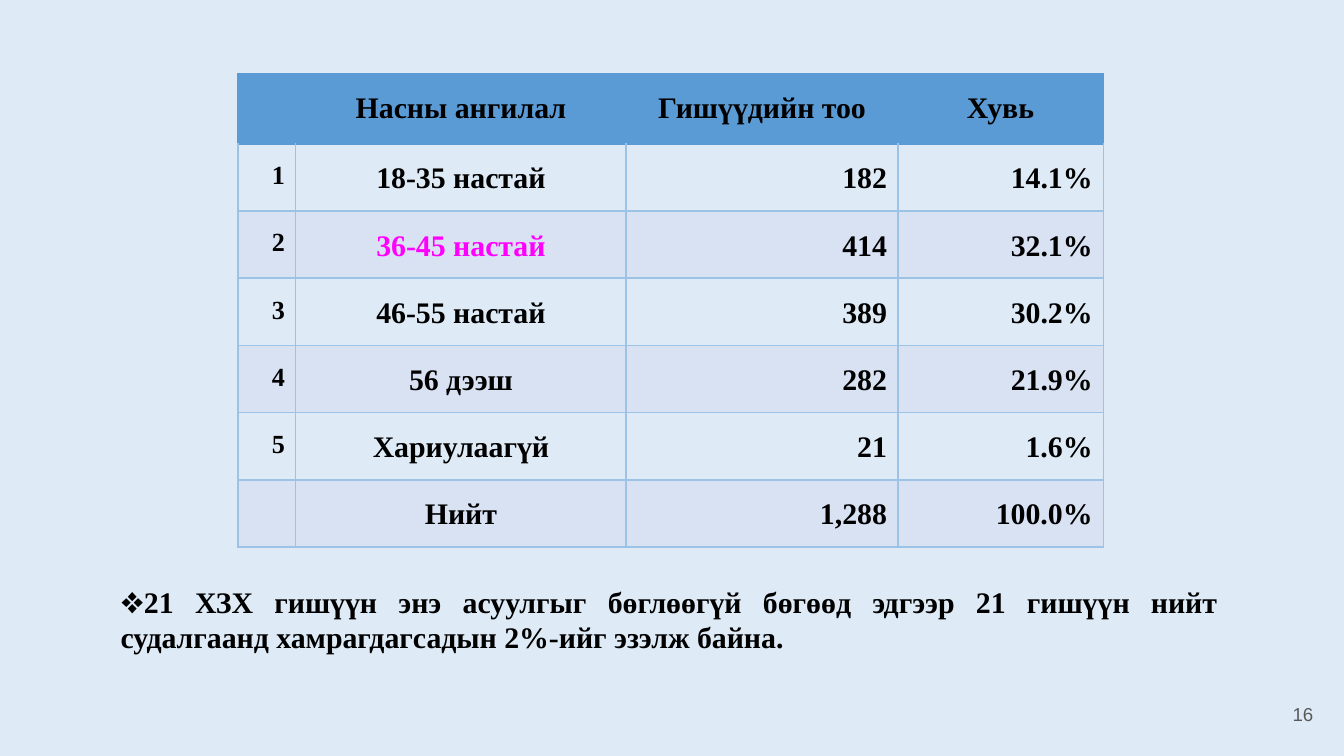
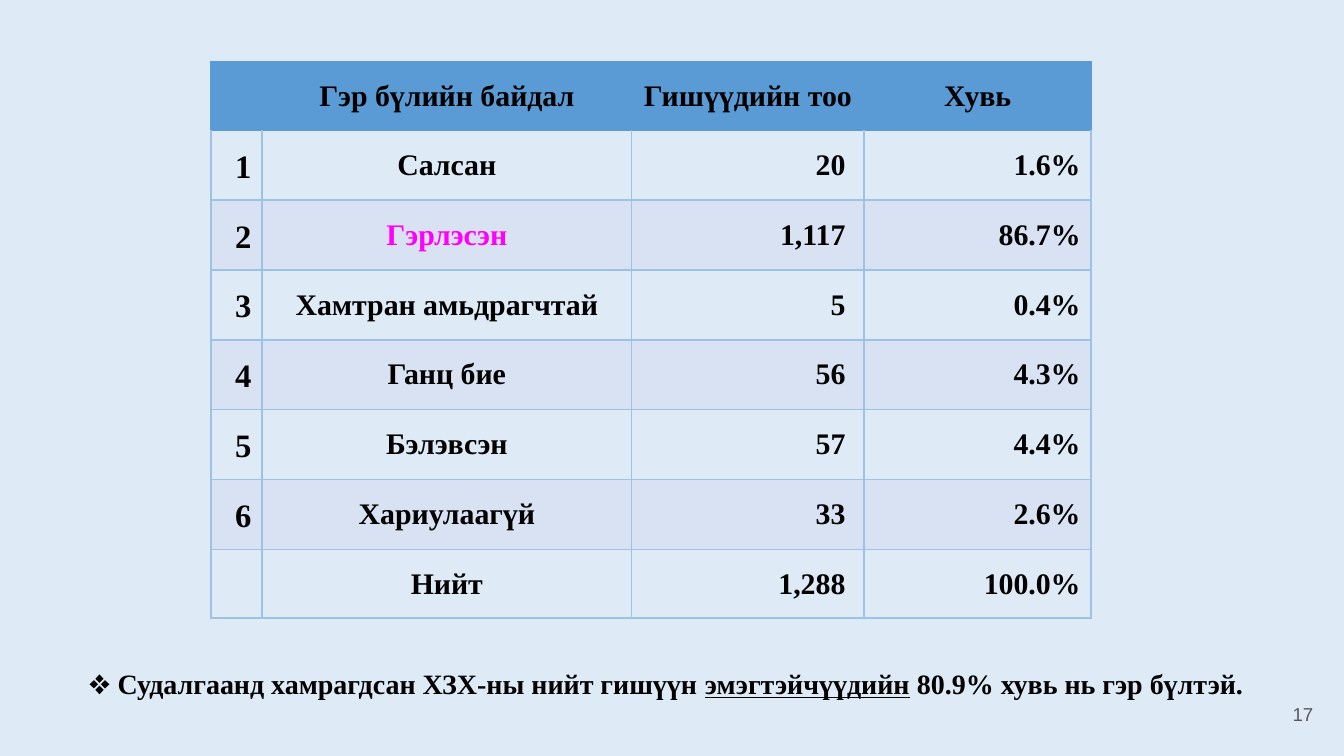
import lxml.etree
import pptx
import pptx.dml.color
import pptx.enum.text
import pptx.oxml.ns
import pptx.util

Inches = pptx.util.Inches
Pt = pptx.util.Pt
ALIGN = pptx.enum.text.PP_ALIGN
ANCHOR = pptx.enum.text.MSO_ANCHOR

BACKGROUND = "DEEBF6"
HEADER_FILL = "5B9BD5"
STRIPES = ("DEEBF6", "D9E2F3")
GRID = "9CC3E5"
BLACK = "000000"
HIGHLIGHT = "FF00FF"
PAGE_GREY = "595959"
SERIF = "Times New Roman"
BODY_SIZE = 16
LINE_SPACING = 1.15
COLUMN_ALIGN = (ALIGN.RIGHT, ALIGN.CENTER, ALIGN.RIGHT, ALIGN.RIGHT)

# Note runs are (text, underlined).
SLIDES = [
    {
        "page": "16",
        "header": ("", "Насны ангилал", "Гишүүдийн тоо", "Хувь"),
        "rows": [
            ("1", "18-35 настай", "182", "14.1%"),
            ("2", "36-45 настай", "414", "32.1%"),
            ("3", "46-55 настай", "389", "30.2%"),
            ("4", "56 дээш", "282", "21.9%"),
            ("5", "Хариулаагүй", "21", "1.6%"),
            ("", "Нийт", "1,288", "100.0%"),
        ],
        "highlight": "36-45 настай",
        "table_at": (1.77, 0.55),
        "columns": (0.43, 2.46, 2.02, 1.53),
        "heights": (0.52, 0.5, 0.5),
        "number_size": 14,
        "count_margin": 0.08,
        "note": [("❖21 ХЗХ гишүүн энэ асуулгыг бөглөөгүй бөгөөд эдгээр 21 гишүүн "
                  "нийт судалгаанд хамрагдагсадын 2%-ийг эзэлж байна.", False)],
        "note_box": (0.8, 4.24, 8.36, 0.88),
        "note_size": 16,
        "note_spacing": 1.0,
    },
    {
        "page": "17",
        "header": ("", "Гэр бүлийн байдал", "Гишүүдийн тоо", "Хувь"),
        "rows": [
            ("1", "Салсан", "20", "1.6%"),
            ("2", "Гэрлэсэн", "1,117", "86.7%"),
            ("3", "Хамтран амьдрагчтай", "5", "0.4%"),
            ("4", "Ганц бие", "56", "4.3%"),
            ("5", "Бэлэвсэн", "57", "4.4%"),
            ("6", "Хариулаагүй", "33", "2.6%"),
            ("", "Нийт", "1,288", "100.0%"),
        ],
        "highlight": "Гэрлэсэн",
        "table_at": (1.57, 0.46),
        "columns": (0.38, 2.75, 1.73, 1.69),
        "heights": (0.51, 0.52, 0.51),
        "number_size": 17.5,
        "count_margin": 0.14,
        "note": [("❖ Судалгаанд хамрагдсан ХЗХ-ны нийт гишүүн ", False),
                 ("эмэгтэйчүүдийн", True),
                 (" 80.9% хувь нь гэр бүлтэй.", False)],
        "note_box": (0.36, 4.82, 9.14, 0.65),
        "note_indent": 0.2,
        "note_size": 15,
        "note_spacing": LINE_SPACING,
    },
]


def rgb(value):
    return pptx.dml.color.RGBColor.from_string(value)


def format_run(run, size, color=BLACK, font=SERIF, bold=True):
    run.font.size = Pt(size)
    run.font.name = font
    run.font.bold = bold
    run.font.color.rgb = rgb(color)


def set_borders(cell, color, top_color):
    properties = cell._tc.get_or_add_tcPr()
    qn = pptx.oxml.ns.qn
    for side in "LRTB":
        line = lxml.etree.SubElement(properties, qn(f"a:ln{side}"), w=str(Pt(1)))
        fill = lxml.etree.SubElement(line, qn("a:solidFill"))
        lxml.etree.SubElement(fill, qn("a:srgbClr"), val=top_color if side == "T" else color)


def fill_cell(cell, text, size, color, alignment, right_margin, bottom_margin):
    cell.margin_left, cell.margin_right = Inches(0.08), Inches(right_margin)
    cell.margin_top, cell.margin_bottom = Inches(0.1), Inches(bottom_margin)
    cell.text_frame.text = text
    paragraph = cell.text_frame.paragraphs[0]
    paragraph.alignment = alignment
    paragraph.line_spacing = LINE_SPACING
    format_run(paragraph.runs[0], size, color)


def add_survey_table(slide, content):
    rows = [content["header"], *content["rows"]]
    first, middle, last = content["heights"]
    heights = [first] + [middle] * (len(rows) - 2) + [last]
    columns = content["columns"]
    left, top = content["table_at"]
    table = slide.shapes.add_table(len(rows), len(columns), Inches(left), Inches(top),
                                   Inches(sum(columns)), Inches(sum(heights))).table
    table.first_row = table.horz_banding = False
    for column, width in zip(table.columns, columns):
        column.width = Inches(width)

    for row_index, values in enumerate(rows):
        table.rows[row_index].height = Inches(heights[row_index])
        is_header = row_index == 0
        for column_index, text in enumerate(values):
            cell = table.cell(row_index, column_index)
            set_borders(cell, HEADER_FILL if is_header else GRID,
                        HEADER_FILL if row_index < 2 else GRID)
            cell.fill.solid()
            cell.fill.fore_color.rgb = rgb(HEADER_FILL if is_header else STRIPES[(row_index - 1) % 2])
            if text:
                is_number = column_index == 0
                is_count = column_index == 2 and not is_header
                fill_cell(cell, text,
                          content["number_size"] if is_number else BODY_SIZE,
                          HIGHLIGHT if text == content["highlight"] else BLACK,
                          ALIGN.CENTER if is_header else COLUMN_ALIGN[column_index],
                          content["count_margin"] if is_count else 0.08,
                          0.08 if is_number else 0.1)


def add_text_box(slide, box, alignment, anchor=ANCHOR.TOP, indent=0):
    """Add an empty wrapping text box and return its first paragraph."""
    frame = slide.shapes.add_textbox(*map(Inches, box)).text_frame
    frame.word_wrap = True
    frame.vertical_anchor = anchor
    frame.margin_left = Inches(0.1 + indent)
    frame.margin_right = frame.margin_top = frame.margin_bottom = Inches(0.1)
    frame.paragraphs[0].alignment = alignment
    return frame.paragraphs[0]


def add_note(slide, content):
    paragraph = add_text_box(slide, content["note_box"], ALIGN.JUSTIFY,
                             indent=content.get("note_indent", 0))
    paragraph.line_spacing = content["note_spacing"]
    for text, underlined in content["note"]:
        run = paragraph.add_run()
        run.text = text
        format_run(run, content["note_size"])
        run.font.underline = underlined


def add_page_number(slide, page):
    paragraph = add_text_box(slide, (9.27, 5.1, 0.6, 0.43), ALIGN.RIGHT, ANCHOR.MIDDLE)
    paragraph.text = page
    format_run(paragraph.runs[0], 10, PAGE_GREY, "Arial", False)


def main():
    presentation = pptx.Presentation()
    presentation.slide_width = Inches(10)
    presentation.slide_height = presentation.slide_width * 9 // 16
    for content in SLIDES:
        slide = presentation.slides.add_slide(presentation.slide_layouts[6])
        slide.background.fill.solid()
        slide.background.fill.fore_color.rgb = rgb(BACKGROUND)
        add_survey_table(slide, content)
        add_note(slide, content)
        add_page_number(slide, content["page"])
    presentation.save("out.pptx")


if __name__ == "__main__":
    main()
